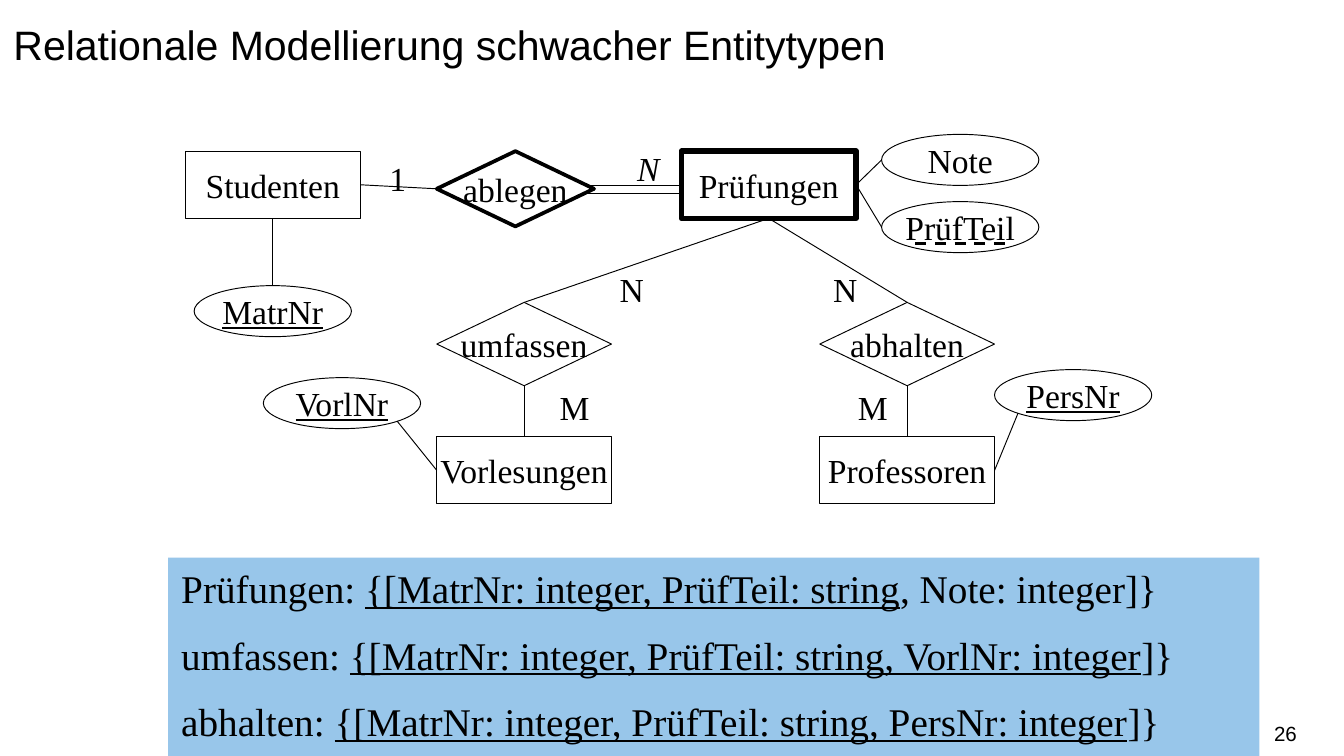
from pptx import Presentation
from pptx.dml.color import RGBColor
from pptx.enum.dml import MSO_LINE
from pptx.enum.shapes import MSO_CONNECTOR, MSO_SHAPE as SHAPE
from pptx.enum.text import MSO_ANCHOR as ANCHOR, MSO_AUTO_SIZE as AUTO, PP_ALIGN as ALIGN
from pptx.oxml.ns import qn
from pptx.util import Inches, Pt
from lxml import etree

BLACK, BLUE = "000000", "98C6EA"
SERIF, SANS = "Times New Roman", "Arial"
SIZES = {SHAPE.RECTANGLE: (1.3, 0.5), SHAPE.DIAMOND: (1.3, 0.62), SHAPE.OVAL: (1.17, 0.38)}


def rgb(color):
    return RGBColor.from_string(color)


def style(p, size, name=SERIF, align=ALIGN.LEFT):
    p.alignment = align
    p.font.size, p.font.name = Pt(size), name
    p.font.color.rgb = rgb(BLACK)


def add_node(shapes, kind, text, x, y, size=None, weight=0.5, underline=None):
    w, h = size or SIZES[kind]
    sp = shapes.add_shape(kind, Inches(x), Inches(y), Inches(w), Inches(h))
    sp.shadow.inherit = False
    sp.fill.background()
    sp.line.color.rgb, sp.line.width = rgb(BLACK), Pt(weight)
    tf = sp.text_frame
    tf.word_wrap, tf.vertical_anchor = False, ANCHOR.MIDDLE
    p = tf.paragraphs[0]
    p.text = text
    style(p, 18, align=ALIGN.CENTER)
    p.font.underline = underline
    return sp


def add_line(shapes, start, end, weight=0.5, dash=None):
    line = shapes.add_connector(MSO_CONNECTOR.STRAIGHT, *start, *end)
    line.line.color.rgb, line.line.width = rgb(BLACK), Pt(weight)
    if dash:
        line.line.dash_style = dash
    etree.SubElement(line._element.spPr, qn("a:effectLst"))


def point(sp, fx, fy):
    """Point at the given fractions of a shape's width and height."""
    return int(sp.left + fx * sp.width), int(sp.top + fy * sp.height)


def add_label(shapes, text, x, y, w, italic=None):
    tf = shapes.add_textbox(Inches(x), Inches(y), Inches(w), Inches(0.4)).text_frame
    tf.word_wrap = False
    p = tf.paragraphs[0]
    p.text = text
    style(p, 18, align=ALIGN.CENTER)
    p.font.italic = italic


def add_er_diagram(slide, x, y):
    shapes = slide.shapes.add_group_shape().shapes

    def node(kind, text, dx, dy, **options):
        return add_node(shapes, kind, text, x + dx, y + dy, **options)

    def link(a, a_at, b, b_at):
        add_line(shapes, point(a, *a_at), point(b, *b_at))

    top, bottom, left, right = (0.5, 0), (0.5, 1), (0, 0.5), (1, 0.5)
    row = 1 / 8
    key_indent = (SIZES[SHAPE.RECTANGLE][0] - SIZES[SHAPE.OVAL][0]) / 2

    students = node(SHAPE.RECTANGLE, "Studenten", 0, row)
    takes = node(SHAPE.DIAMOND, "ablegen", 1.87, row, size=(1.17, 0.56), weight=2)
    exams = node(SHAPE.RECTANGLE, "Prüfungen", 3.69, row, weight=3)
    student_key = node(SHAPE.OVAL, "MatrNr", key_indent, row + 1, underline=True)
    link(students, right, takes, left)
    link(students, bottom, student_key, top)

    # Total participation of the weak entity: double line
    for dy in (0.38, 0.44):
        add_line(shapes, (Inches(x + 2.97), Inches(y + dy)), (exams.left, Inches(y + dy)))

    for text, dy in (("Note", 0), ("PrüfTeil", 0.5)):
        link(exams, right, node(SHAPE.OVAL, text, 5.18, dy), left)
    # Partial key: dashed underline
    add_line(shapes, (Inches(x + 5.43), Inches(y + 0.81)),
             (Inches(x + 6.15), Inches(y + 0.81)), 1.5, MSO_LINE.DASH)

    branches = (
        (1.87, "umfassen", "Vorlesungen", "VorlNr", (0.58, 1.81), (0.85, 0.85), left),
        (4.72, "abhalten", "Professoren", "PersNr", (6.02, 1.75), (0.15, 0.85), right),
    )
    for dx, relation, entity, key, key_at, key_side, entity_side in branches:
        diamond = node(SHAPE.DIAMOND, relation, dx, 1.25)
        box = node(SHAPE.RECTANGLE, entity, dx, 2.25)
        oval = node(SHAPE.OVAL, key, *key_at, underline=True)
        link(exams, bottom, diamond, top)
        link(diamond, bottom, box, top)
        link(oval, key_side, box, entity_side)

    add_label(shapes, "1", x + 1.42, y + row, 0.26)
    add_label(shapes, "N", x + 3.26, y + 0.05, 0.37, italic=True)
    for text, dx, dy, w in (("N", 3.13, 0.95, 0.38), ("N", 4.72, 0.95, 0.38),
                            ("M", 2.68, 1.83, 0.43), ("M", 4.9, 1.83, 0.43)):
        add_label(shapes, text, x + dx, y + dy, w)


def add_schemas(slide, x, y, w, h):
    sp = slide.shapes.add_shape(SHAPE.RECTANGLE, Inches(x), Inches(y), Inches(w), Inches(h))
    sp.shadow.inherit = False
    sp.fill.solid()
    sp.fill.fore_color.rgb = rgb(BLUE)
    sp.line.fill.background()
    tf = sp.text_frame
    tf.word_wrap, tf.vertical_anchor = True, ANCHOR.TOP
    schemas = (
        ("Prüfungen: ", "{[MatrNr: integer, PrüfTeil: string", ", Note: integer]}"),
        ("umfassen: ", "{[MatrNr: integer, PrüfTeil: string, VorlNr: integer", "]}"),
        ("abhalten: ", "{[MatrNr: integer, PrüfTeil: string, PersNr: integer", "]}"),
    )
    for i, (name, key, rest) in enumerate(schemas):
        p = tf.add_paragraph() if i else tf.paragraphs[0]
        if i:
            p.space_before = Pt(10.5)
        style(p, 21)
        for text in (name, key, rest):
            r = p.add_run()
            r.text = text
            if text == key:
                r.font.underline = True


def add_title(slide, text, x, y, w, h):
    title = slide.shapes.title
    title.left, title.top, title.width, title.height = map(Inches, (x, y, w, h))
    tf = title.text_frame
    tf.auto_size, tf.vertical_anchor = AUTO.NONE, ANCHOR.TOP
    p = tf.paragraphs[0]
    p.text = text
    p.line_spacing = 1.25
    style(p, 22, SANS)


def add_page_number(slide, number, x, y, w, h):
    tf = slide.shapes.add_textbox(Inches(x), Inches(y), Inches(w), Inches(h)).text_frame
    tf.word_wrap, tf.vertical_anchor = True, ANCHOR.MIDDLE
    tf.margin_left = tf.margin_right = 0
    p = tf.paragraphs[0]
    p.text = str(number)
    style(p, 11, SANS, ALIGN.RIGHT)


def main():
    prs = Presentation()
    prs.slide_width = Inches(10)
    prs.slide_height = prs.slide_width * 9 // 16
    s = prs.slides.add_slide(prs.slide_layouts[5])
    add_title(s, "Relationale Modellierung schwacher Entitytypen", 0, 0, 10, 0.94)
    add_er_diagram(s, 1.38, 1)
    add_schemas(s, 1.25, 4.15, 8.12, 1.51)
    add_page_number(s, 26, 7.41, 5.31, 2.24, 0.3)
    prs.save("out.pptx")


if __name__ == "__main__":
    main()
